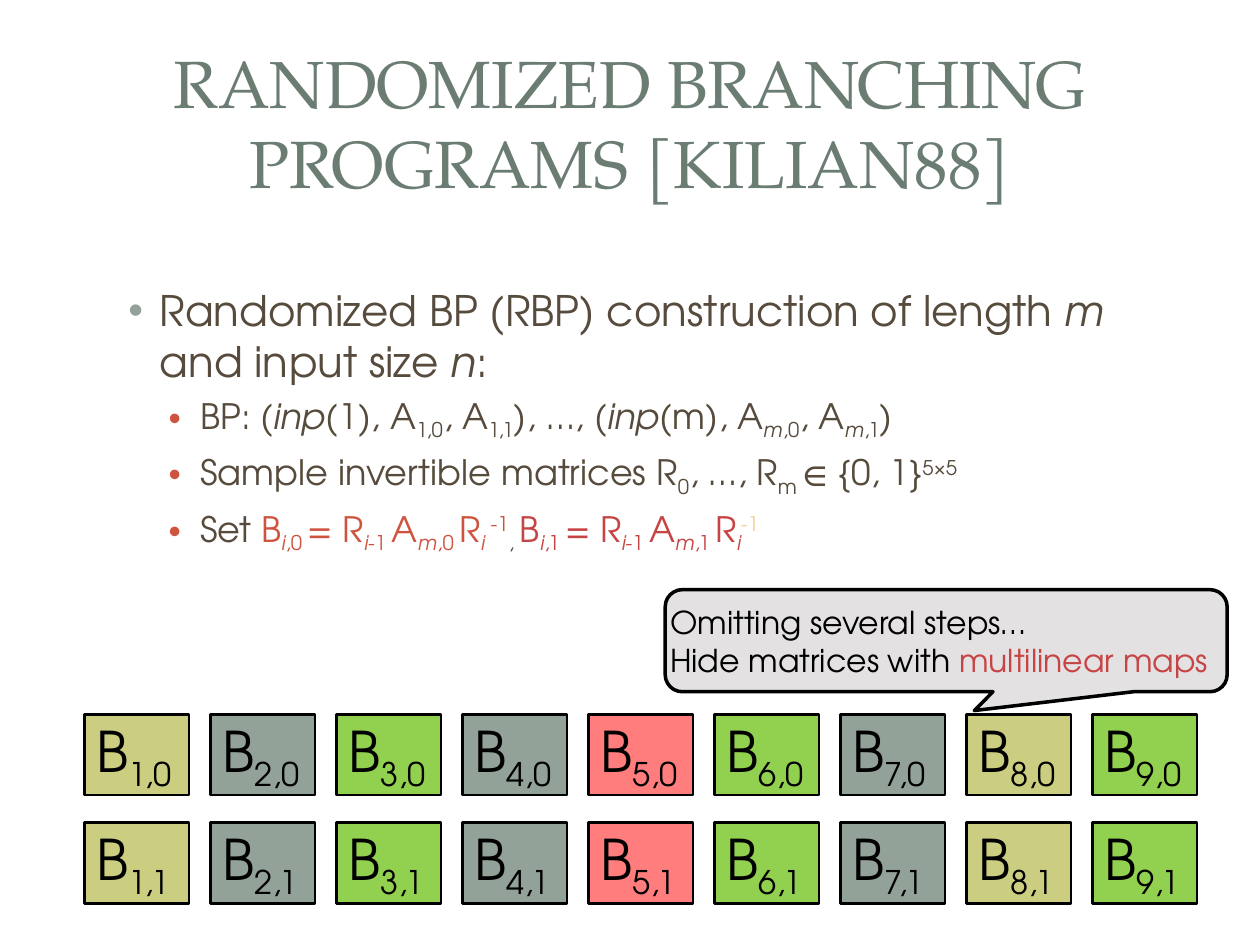
from lxml import etree
from pptx import Presentation
from pptx import util as u
from pptx.dml.color import RGBColor
from pptx.enum import shapes, text
from pptx.oxml import ns

HEADING, BODY = "TeX Gyre Pagella", "TeX Gyre Adventor"
BLACK, BROWN, SAGE = "000000", "564B3C", "93A299"
ORANGE, RED, PALE = "CF543F", "C74444", "F1D394"
OLIVE, GREEN, PINK = "CBCE81", "92D050", "FF7D7D"
SUB, SUP = -25, 30


def color(value):
    return RGBColor.from_string(value)


def span(content, **style):
    """Text with its format: size, font, tint, italic, base."""
    return content, style


def sub(content, **style):
    return span(content, base=SUB, **style)


def var(content, **style):
    return span(content, italic=True, **style)


class Page:
    def __init__(self, deck):
        self.shapes = deck.slides.add_slide(deck.slide_layouts[6]).shapes

    def frame(self, box, insets=(0.1, 0.05, 0.1, 0.05), middle=True):
        frame = box.text_frame
        frame.word_wrap = True
        frame.vertical_anchor = text.MSO_ANCHOR.MIDDLE if middle else text.MSO_ANCHOR.TOP
        (frame.margin_left, frame.margin_top,
         frame.margin_right, frame.margin_bottom) = map(u.Inches, insets)
        return frame

    def text_box(self, left, top, width, height, middle=True):
        box = self.shapes.add_textbox(*map(u.Inches, (left, top, width, height)))
        return self.frame(box, middle=middle)

    def block(self, kind, left, top, width, height, fill, line, insets):
        box = self.shapes.add_shape(kind, *map(u.Inches, (left, top, width, height)))
        box.shadow.inherit = False
        box.fill.solid()
        box.fill.fore_color.rgb = color(fill)
        box.line.color.rgb = color(BLACK)
        box.line.width = u.Pt(line)
        return box, self.frame(box, insets)

    def paragraph(self, frame, spans, size, font=BODY, tint=BLACK,
                  align=text.PP_ALIGN.LEFT, before=0):
        first = not frame.paragraphs[0].runs
        para = frame.paragraphs[0] if first else frame.add_paragraph()
        para.alignment = align
        para.space_before = u.Pt(before)
        for content, style in spans:
            run = para.add_run()
            run.text = content
            run.font.size = u.Pt(size)
            run.font.name = font
            run.font.italic = style.get("italic", False)
            run.font.color.rgb = color(style.get("tint", tint))
            if "base" in style:
                run.font._element.set("baseline", str(style["base"] * 1000))
        return para

    def bullet(self, frame, spans, size, indent, dot, level=0, before=0):
        para = self.paragraph(frame, spans, size, tint=BROWN, before=before)
        para.level = level
        props = para._p.get_or_add_pPr()
        props.set("marL", str(u.Inches(indent)))
        props.set("indent", str(u.Inches(-0.25)))
        paint = etree.SubElement(props, ns.qn("a:buClr"))
        etree.SubElement(paint, ns.qn("a:srgbClr"), val=dot)
        etree.SubElement(props, ns.qn("a:buFont"), typeface="Arial")
        etree.SubElement(props, ns.qn("a:buChar"), char="•")


def randomized_matrix(bit, tint, gap, inverse):
    """B(i,bit) = R(i-1) A(m,bit) R(i)^-1."""
    return [
        span("B", tint=tint), var("i", tint=tint, base=SUB), sub(f",{bit} ", tint=tint),
        span("= R", tint=tint), var("i", tint=tint, base=SUB), sub("-1 ", tint=tint),
        span("A", tint=tint), var("m", tint=tint, base=SUB), sub(f",{bit} ", tint=tint),
        span("R", tint=tint), var("i" + gap, tint=tint, base=SUB),
        span("-1", tint=inverse, base=SUP),
    ]


def main():
    deck = Presentation()
    deck.slide_width, deck.slide_height = u.Inches(10), u.Inches(7.5)
    page = Page(deck)

    # Title
    title = page.text_box(0.33, 0.34, 9.34, 1.25)
    page.paragraph(title, [span("RANDOMIZED BRANCHING PROGRAMS [KILIAN88]")], 38,
                   HEADING, "6B7D72", text.PP_ALIGN.CENTER)

    # Construction steps
    body = page.text_box(0.79, 2.21, 8.41, 3.16, middle=False)
    page.bullet(body, [
        span("Randomized BP (RBP) construction of length "), var("m"),
        span(" and input size "), var("n"), span(":")], 24, 0.38, SAGE)
    steps = [
        [span("BP: ("), var("inp"), span("(1), A"), sub("1,0"), span(", A"), sub("1,1"),
         span("), …, ("), var("inp"), span("(m), A"), var("m", base=SUB), sub(",0"),
         span(", A"), var("m", base=SUB), sub(",1"), span(")")],
        [span("Sample invertible matrices R"), sub("0"), span(", …, R"), sub("m "),
         span("∈ {0, 1}"), span("5×5", base=SUP)],
        [span("Set "), *randomized_matrix(0, ORANGE, " ", ORANGE), sub(", "),
         *randomized_matrix(1, RED, "", PALE)],
    ]
    for step in steps:
        page.bullet(body, step, 20, 0.7, ORANGE, level=1, before=5)

    # Grid of randomized matrices
    fills = [OLIVE, SAGE, GREEN, SAGE, PINK, GREEN, SAGE, OLIVE, GREEN]
    for bit in range(2):
        for column, fill in enumerate(fills):
            _, cell = page.block(shapes.MSO_SHAPE.RECTANGLE, 0.67 + column,
                                 5.67 + 0.86 * bit, 0.83, 0.64, fill, 1.5,
                                 (0.1, 0.05, 0, 0.05))
            cell.word_wrap = False
            page.paragraph(cell, [span("B"), sub(f"{column + 1},{bit}")], 32)

    # Callout
    callout, note = page.block(shapes.MSO_SHAPE.ROUNDED_RECTANGULAR_CALLOUT,
                               5.28, 4.68, 4.46, 0.81, "E4E1E3", 2, (0, 0.05, 0, 0.05))
    for index, value in enumerate((0.05, 0.685, 0.167)):
        callout.adjustments[index] = value
    page.paragraph(note, [span("Omitting several steps…")], 18)
    page.paragraph(note, [span("Hide matrices with "),
                          span("multilinear maps", tint=RED)], 18)

    deck.save("out.pptx")


if __name__ == "__main__":
    main()
